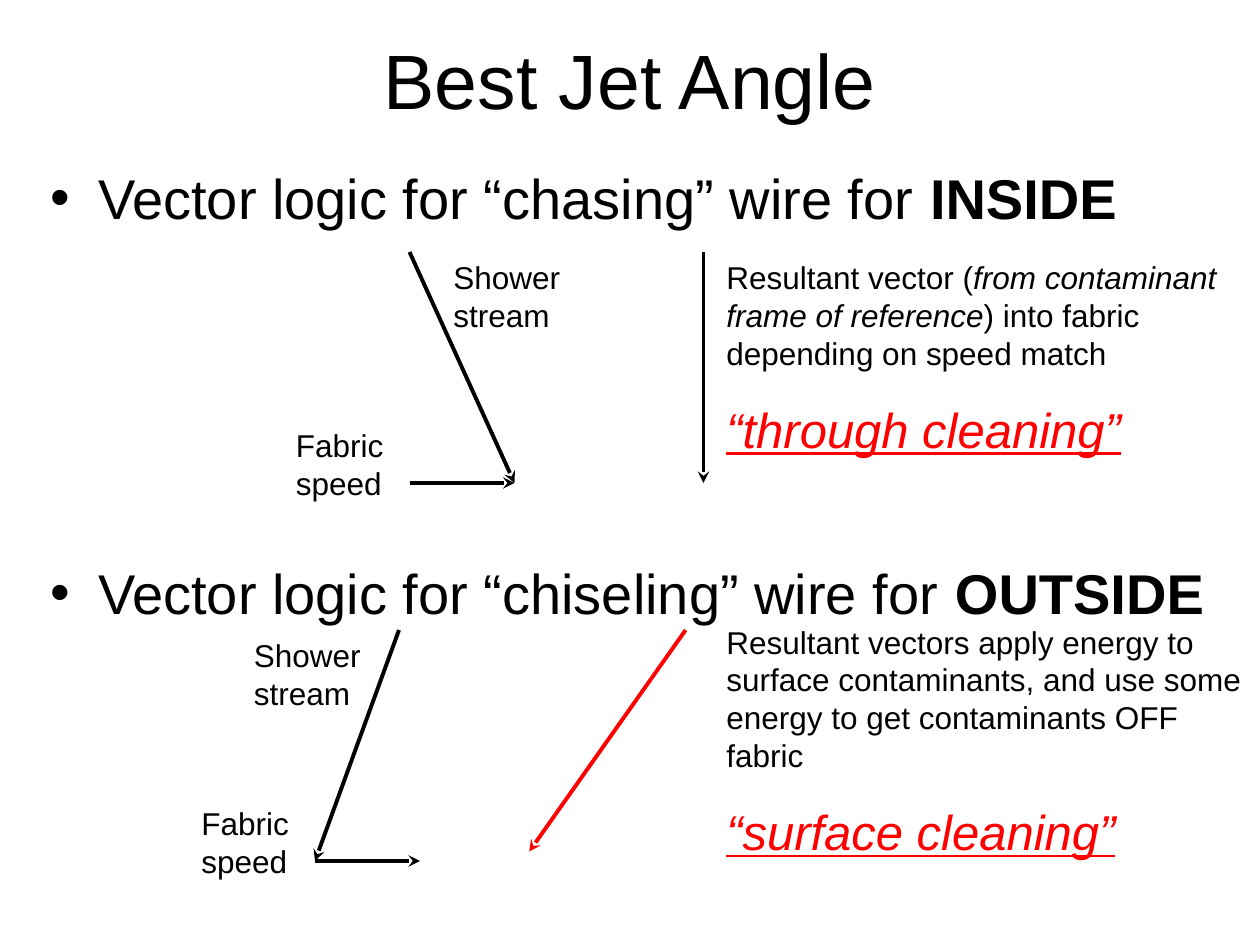
from lxml import etree
from pptx import Presentation
from pptx.dml.color import RGBColor
from pptx.enum.shapes import MSO_CONNECTOR
from pptx.enum.text import MSO_ANCHOR, PP_ALIGN
from pptx.oxml.ns import qn
from pptx.util import Inches, Pt

STRAIGHT = MSO_CONNECTOR.STRAIGHT
MIDDLE = MSO_ANCHOR.MIDDLE
CENTER = PP_ALIGN.CENTER
TITLE_ONLY = 5
BLACK, RED = "000000", "FF0000"

deck = Presentation()
deck.slide_width, deck.slide_height = Inches(10), Inches(7.5)
slide = deck.slides.add_slide(deck.slide_layouts[TITLE_ONLY])
CELL = deck.slide_width / 120  # grid of 120 columns by 90 rows


def grid(*cells):
    return [round(cell * CELL) for cell in cells]


def write(paragraph, text, size=18, color=BLACK, bold=False, italic=False, underline=False):
    run = paragraph.add_run()
    run.text = text
    font = run.font
    font.name, font.size = "Arial", Pt(size)
    font.bold, font.italic, font.underline = bold, italic, underline
    font.color.rgb = RGBColor.from_string(color)


title = slide.shapes.title
title.left, title.top, title.width, title.height = grid(6, 0, 108, 15)
title.text_frame.vertical_anchor = MIDDLE
heading = title.text_frame.paragraphs[0]
heading.alignment = CENTER
write(heading, "Best Jet Angle", size=44)

# Two bullets, with room for a vector diagram below each
bullets = slide.shapes.add_textbox(*grid(3.6, 15, 113.5, 65)).text_frame
bullets.word_wrap = True
for number, (action, side) in enumerate([("chasing", "INSIDE"), ("chiseling", "OUTSIDE")]):
    bullet = bullets.add_paragraph() if number else bullets.paragraphs[0]
    bullet.space_before = Pt(187 * number)
    properties = bullet._p.get_or_add_pPr()
    properties.set("marL", str(Inches(0.38)))
    properties.set("indent", str(-Inches(0.38)))
    etree.SubElement(properties, qn("a:buFont"), typeface="Arial")
    etree.SubElement(properties, qn("a:buChar"), char="•")
    write(bullet, f"Vector logic for “{action}” wire for ", size=32)
    write(bullet, side, size=32, bold=True)

# Start column and row, end column and row, colour
vectors = [
    (39, 46, 49, 46, BLACK),
    (39, 24, 49, 46, BLACK),
    (67, 24, 67, 46, BLACK),
    (30, 82, 40, 82, BLACK),
    (38, 60, 30, 82, BLACK),
    (65.3, 60, 50.4, 81.1, RED),
]
for *ends, color in vectors:
    vector = slide.shapes.add_connector(STRAIGHT, *grid(*ends))
    vector.line.width = Pt(2.25)
    vector.line.color.rgb = RGBColor.from_string(color)
    etree.SubElement(vector.line._get_or_add_ln(), qn("a:tailEnd"), type="stealth")
    etree.SubElement(vector._element.spPr, qn("a:effectLst"))

vector_labels = [
    (27, 40, "Fabric speed"),
    (42, 24, "Shower stream"),
    (18, 76, "Fabric speed"),
    (23, 60, "Shower stream"),
]
for column, row, label in vector_labels:
    frame = slide.shapes.add_textbox(*grid(column, row, 14, 8.4)).text_frame
    frame.word_wrap = True
    write(frame.paragraphs[0], label)

# Row, width, height, explanation as (text, italic) parts, conclusion
results = [
    (24, 50, 20.6,
     [("Resultant vector (", False), ("from contaminant frame of reference", True),
      (") into fabric depending on speed match", False)],
     "“through cleaning”"),
    (58.7, 52, 24.2,
     [("Resultant vectors apply energy to surface contaminants, and use some "
       "energy to get contaminants OFF fabric", False)],
     "“surface cleaning”"),
]
for row, width, height, explanation, conclusion in results:
    frame = slide.shapes.add_textbox(*grid(68, row, width, height)).text_frame
    frame.word_wrap = True
    for text, italic in explanation:
        write(frame.paragraphs[0], text, italic=italic)
    closing = frame.add_paragraph()
    closing.space_before = Pt(16)
    write(closing, conclusion, size=28, color=RED, italic=True, underline=True)

deck.save("out.pptx")
